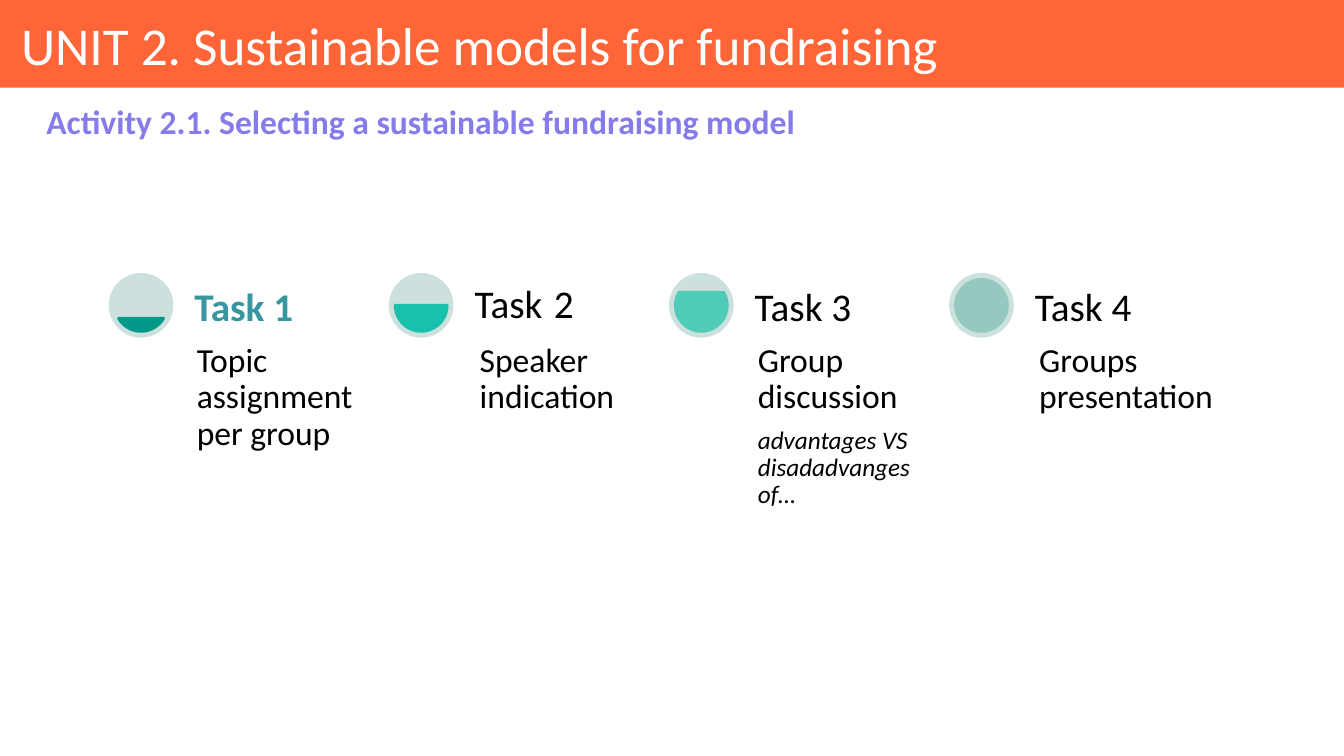
from math import asin, degrees

from pptx import Presentation
from pptx import util as u
from pptx.dml.color import RGBColor
from pptx.enum import shapes, text

# Content
TITLE = "UNIT 2. Sustainable models for fundraising"
ACTIVITY = "Activity 2.1. Selecting a sustainable fundraising model"
# Heading spans and detail paragraphs are (text, size); level is the gauge's filled share
TASKS = [
    {"heading": [("Task 1", 28)], "details": [("Topic assignment per group", 24)],
     "level": 0.25, "colour": "level 1", "detail_left": 4.78, "detail_width": 4.78},
    {"heading": [("Task", 28), (" ", 36), ("2", 28)], "details": [("Speaker indication", 24)],
     "level": 0.5, "colour": "level 2", "detail_left": 11.91, "detail_width": 4.78},
    {"heading": [("Task 3", 28)],
     "details": [("Group discussion", 24), ("advantages VS disadadvanges of…", 18)],
     "level": 0.75, "colour": "level 3", "detail_left": 18.92, "detail_width": 4.78},
    {"heading": [("Task 4", 28)], "details": [("Groups presentation", 24)],
     "level": 1, "colour": "level 4", "detail_left": 26.01, "detail_width": 5.72},
]
CURRENT_TASK = 0

COLOURS = {
    "banner": "FF6537", "white": "FFFFFF", "activity": "867BEA", "black": "000000",
    "current": "37969F", "gauge": "CCE1DD", "level 1": "009889",
    "level 2": "19C1AC", "level 3": "50CBB8", "level 4": "95C8BF",
}
FONT = "Calibri"

# Layout, in centimetres
FIRST_LEFT, ROW_TOP, PITCH = 2.74, 6.88, 7.06
GAUGE, RIM = 1.63, 0.16
HEADING_OFFSET, HEADING_WIDTH = 1.96, 4.78
DETAIL_TOP, DETAIL_HEIGHT = 8.48, 6.78


def rgb(name):
    return RGBColor.from_string(COLOURS[name])


def add_solid(page, kind, place, colour, line_width=0):
    shape = page.shapes.add_shape(kind, *map(u.Cm, place))
    shape.shadow.inherit = False
    shape.fill.solid()
    shape.fill.fore_color.rgb = rgb(colour)
    if line_width:
        shape.line.color.rgb = rgb(colour)
        shape.line.width = u.Pt(line_width)
    else:
        shape.line.fill.background()
    return shape


def set_frame(box, anchor, insets):
    frame = box.text_frame
    frame.word_wrap = True
    frame.auto_size = text.MSO_AUTO_SIZE.NONE
    frame.vertical_anchor = anchor
    (frame.margin_left, frame.margin_top,
     frame.margin_right, frame.margin_bottom) = map(u.Cm, insets)
    return frame


def add_frame(page, place, anchor, insets):
    return set_frame(page.shapes.add_textbox(*map(u.Cm, place)), anchor, insets)


def style(para, size, colour, bold=False, italic=False):
    para.line_spacing = 0.9
    font = para.font
    font.name, font.size, font.bold, font.italic = FONT, u.Pt(size), bold, italic
    font.color.rgb = rgb(colour)


def add_gauge(page, left, level, colour):
    add_solid(page, shapes.MSO_SHAPE.OVAL, (left, ROW_TOP, GAUGE, GAUGE), "gauge")
    inner = GAUGE - 2 * RIM
    liquid = add_solid(page, shapes.MSO_SHAPE.CHORD,
                       (left + RIM, ROW_TOP + RIM, inner, inner), colour, 2)
    # A degree is 60000 angle units, and an adjustment of 1 is 100000 units
    angle = degrees(asin(1 - 2 * level))
    liquid.adjustments[0] = round(angle % 360 * 0.6, 2)
    liquid.adjustments[1] = round((180 - angle) * 0.6, 2)


def add_task(page, index, task):
    left = FIRST_LEFT + index * PITCH
    add_gauge(page, left, task["level"], task["colour"])

    # Details
    frame = add_frame(page, (task["detail_left"], DETAIL_TOP, task["detail_width"], DETAIL_HEIGHT),
                      text.MSO_ANCHOR.TOP, [0.18] * 4)
    for number, (words, size) in enumerate(task["details"]):
        para = frame.add_paragraph() if number else frame.paragraphs[0]
        para.text = words
        para.space_after = u.Pt(8)
        style(para, size, "black", italic=number > 0)

    # Heading
    frame = add_frame(page, (left + HEADING_OFFSET, ROW_TOP, HEADING_WIDTH, GAUGE),
                      text.MSO_ANCHOR.BOTTOM, [0.2] * 4)
    para = frame.paragraphs[0]
    current = index == CURRENT_TASK
    style(para, 28, "current" if current else "black", bold=current)
    for words, size in task["heading"]:
        span = para.add_run()
        span.text = words
        span.font.size = u.Pt(size)


def main():
    deck = Presentation()
    deck.slide_width, deck.slide_height = u.Cm(33.87), u.Cm(19.05)
    page = deck.slides.add_slide(deck.slide_layouts.get_by_name("Title Only"))

    # Title on its banner
    title = page.shapes.title
    banner = add_solid(page, shapes.MSO_SHAPE.RECTANGLE, (0, 0, 33.87, 2.21), "banner")
    title.element.addprevious(banner.element)
    title.left, title.top, title.width, title.height = map(u.Cm, (0.28, 0.23, 33.17, 1.98))
    para = set_frame(title, text.MSO_ANCHOR.MIDDLE, (0.25, 0.15, 0.15, 0.15)).paragraphs[0]
    para.text = TITLE
    para.alignment = text.PP_ALIGN.LEFT
    style(para, 38, "white")

    # Activity line
    para = add_frame(page, (0.28, 2.36, 33.17, 1.52), text.MSO_ANCHOR.MIDDLE,
                     (0.89, 0.13, 0.25, 0.13)).paragraphs[0]
    para.text = ACTIVITY
    para.alignment = text.PP_ALIGN.JUSTIFY
    style(para, 24, "activity", bold=True)

    # Tasks
    for index, task in enumerate(TASKS):
        add_task(page, index, task)

    deck.save("out.pptx")


if __name__ == "__main__":
    main()
